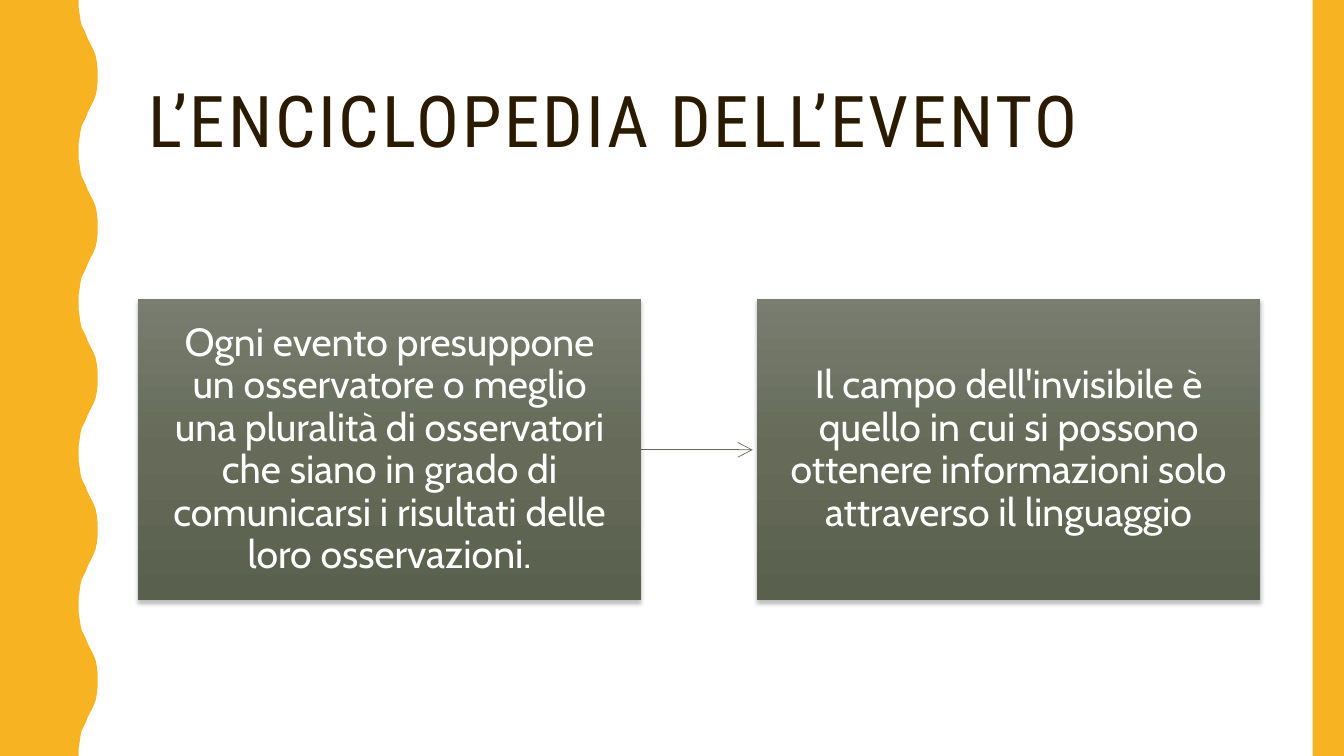
from copy import deepcopy
from dataclasses import dataclass

from lxml.etree import SubElement
from pptx import Presentation
from pptx.dml.color import RGBColor
from pptx.enum.shapes import MSO_CONNECTOR, MSO_SHAPE
from pptx.enum.text import MSO_ANCHOR, MSO_AUTO_SIZE, PP_ALIGN
from pptx.oxml.ns import qn
from pptx.shapes.autoshape import Shape
from pptx.slide import Slide
from pptx.text.text import TextFrame
from pptx.util import Cm, Pt


@dataclass(frozen=True)
class Theme:
    paper: str = "FFFFFF"
    accent: str = "F8B323"
    title: str = "2A1A00"
    box_text: str = "FFFFFF"
    box_gradient: tuple[str, ...] = ("797D70", "656B58", "5A604E")
    arrow: str = "656A59"
    shadow: str = "000000"
    title_font: str = "Roboto Condensed"
    body_font: str = "Cabin"
    title_size: int = 51
    body_size: int = 28


@dataclass(frozen=True)
class Box:
    """A text box of the diagram, in centimetres."""
    left: float
    text: str
    top: float = 7.54
    width: float = 12.67
    height: float = 7.59


THEME = Theme()
WIDTH, HEIGHT = 33.87, 19.05
BAND_WIDTH = 0.79
ARROW_GAP = 0.11

# Half a wave of the left band, from trough to crest
WAVE_COUNT = 5
PERIOD = HEIGHT / WAVE_COUNT
HALF_WAVE = [
    (1.98, 0), (1.98, 0.18), (2.01, 0.36), (2.03, 0.51), (2.06, 0.64),
    (2.11, 0.74), (2.16, 0.84), (2.21, 0.97), (2.26, 1.07), (2.31, 1.17),
    (2.36, 1.27), (2.41, 1.4), (2.44, 1.55), (2.46, 1.73), (2.46, 1.9),
]

BOXES = [
    Box(3.48, "Ogni evento presuppone un osservatore o meglio una pluralità di "
              "osservatori che siano in grado di comunicarsi i risultati delle "
              "loro osservazioni."),
    Box(19.08, "Il campo dell'invisibile è quello in cui si possono ottenere "
               "informazioni solo attraverso il linguaggio"),
]


def rgb(value: str) -> RGBColor:
    return RGBColor.from_string(value)


def paint(sp: Shape, color: str) -> None:
    sp.fill.solid()
    sp.fill.fore_color.rgb = rgb(color)
    sp.line.fill.background()
    sp.shadow.inherit = False


def write(tf: TextFrame, text: str, font: str, size: int, color: str,
          align: PP_ALIGN) -> None:
    tf.text = text
    tf.word_wrap = True
    tf.auto_size = MSO_AUTO_SIZE.NONE
    tf.vertical_anchor = MSO_ANCHOR.MIDDLE
    p = tf.paragraphs[0]
    p.alignment = align
    p.line_spacing = 0.9
    r = p.runs[0]
    r.font.name = font
    r.font.size = Pt(size)
    r.font.color.rgb = rgb(color)


def draw_bands(s: Slide) -> None:
    wave = HALF_WAVE + [(x, PERIOD - y) for x, y in reversed(HALF_WAVE)]
    edge = [(Cm(x), Cm(y + i * PERIOD)) for i in range(WAVE_COUNT) for x, y in wave]
    builder = s.shapes.build_freeform(0, 0)
    builder.add_line_segments(edge + [(0, Cm(HEIGHT))], close=True)
    paint(builder.convert_to_shape(), THEME.accent)

    band = s.shapes.add_shape(MSO_SHAPE.RECTANGLE, Cm(WIDTH - BAND_WIDTH), 0,
                              Cm(BAND_WIDTH), Cm(HEIGHT))
    paint(band, THEME.accent)


def draw_title(s: Slide, text: str) -> None:
    sp = s.shapes.title
    sp.left, sp.top, sp.width, sp.height = Cm(3.48), Cm(1.07), Cm(28.27), Cm(4.14)
    write(sp.text_frame, text, THEME.title_font, THEME.title_size, THEME.title,
          PP_ALIGN.LEFT)
    r = sp.text_frame.paragraphs[0].runs[0]
    r.font._element.set("spc", "200")


def shade(sp: Shape) -> None:
    """Fill with the vertical gradient and cast a soft shadow."""
    sp.fill.gradient()
    sp.fill.gradient_angle = 270
    spPr = sp._element.spPr
    stops = spPr.find(qn("a:gradFill")).find(qn("a:gsLst"))
    stops.append(deepcopy(stops[0]))
    last = len(THEME.box_gradient) - 1
    for i, stop in enumerate(sp.fill.gradient_stops):
        stop.position = i / last
        stop.color.rgb = rgb(THEME.box_gradient[i])

    sp.line.fill.background()
    sp.shadow.inherit = False
    shadow = SubElement(spPr.find(qn("a:effectLst")), qn("a:outerShdw"),
                        blurRad=str(Pt(3)), dist=str(Pt(2)), dir="5400000",
                        rotWithShape="0")
    color = SubElement(shadow, qn("a:srgbClr"), val=THEME.shadow)
    SubElement(color, qn("a:alpha"), val="25000")


def draw_box(s: Slide, box: Box) -> None:
    sp = s.shapes.add_shape(MSO_SHAPE.RECTANGLE, Cm(box.left), Cm(box.top),
                            Cm(box.width), Cm(box.height))
    shade(sp)
    tf = sp.text_frame
    tf.margin_left = tf.margin_right = Cm(0.61)
    tf.margin_top = tf.margin_bottom = Cm(0.66)
    write(tf, box.text, THEME.body_font, THEME.body_size, THEME.box_text,
          PP_ALIGN.CENTER)


def draw_arrow(s: Slide, start: Box, end: Box) -> None:
    y = Cm(start.top + start.height / 2)
    arrow = s.shapes.add_connector(MSO_CONNECTOR.STRAIGHT,
                                   Cm(start.left + start.width), y,
                                   Cm(end.left - ARROW_GAP), y)
    arrow.line.color.rgb = rgb(THEME.arrow)
    arrow.line.width = Pt(0.5)
    SubElement(arrow.line._get_or_add_ln(), qn("a:tailEnd"), type="arrow",
               w="lg", len="lg")
    SubElement(arrow._element.spPr, qn("a:effectLst"))


def main() -> None:
    prs = Presentation()
    prs.slide_width, prs.slide_height = Cm(WIDTH), Cm(HEIGHT)
    s = prs.slides.add_slide(prs.slide_layouts[5])
    s.background.fill.solid()
    s.background.fill.fore_color.rgb = rgb(THEME.paper)

    # Frame and title
    draw_bands(s)
    draw_title(s, "L’ENCICLOPEDIA DELL’EVENTO")

    # Diagram
    draw_arrow(s, *BOXES)
    for box in BOXES:
        draw_box(s, box)

    prs.save("out.pptx")


if __name__ == "__main__":
    main()
